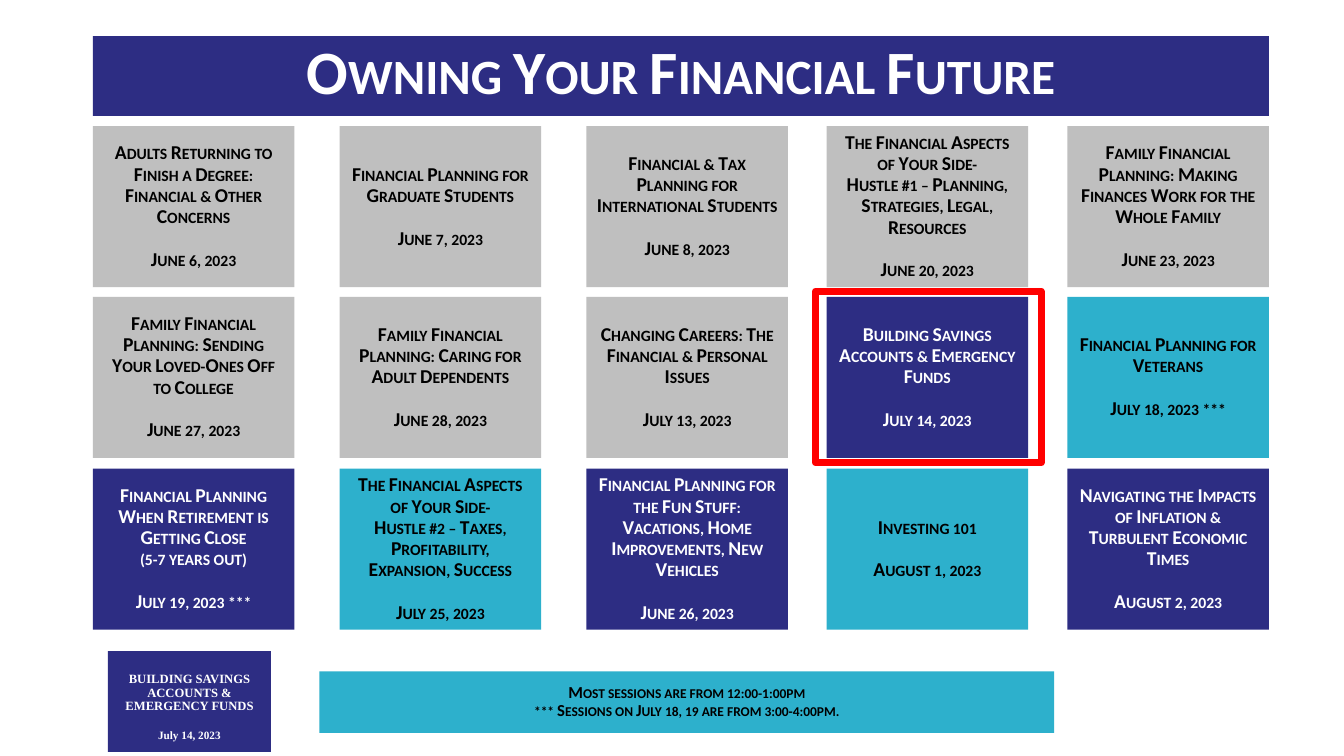
from copy import deepcopy

from pptx import Presentation
from pptx.dml.color import RGBColor
from pptx.enum.shapes import MSO_SHAPE
from pptx.enum.text import MSO_ANCHOR as Anchor, PP_ALIGN as Align
from pptx.oxml.ns import qn
from pptx.util import Cm, Pt

NAVY = RGBColor(0x2D, 0x2D, 0x83)
TEAL = RGBColor(0x2D, 0xB0, 0xCC)
GRAY = RGBColor(0xBF, 0xBF, 0xBF)
RED = RGBColor(0xFF, 0x00, 0x00)
WHITE = RGBColor(0xFF, 0xFF, 0xFF)
BLACK = RGBColor(0x00, 0x00, 0x00)

# Content: rows of sessions as (topic, date, fill)
TITLE = "Owning Your Financial Future"
SESSIONS = [
    [
        ("Adults Returning to Finish a Degree: Financial & Other Concerns", "June 6, 2023", GRAY),
        ("Financial Planning for Graduate Students", "June 7, 2023", GRAY),
        ("Financial & Tax Planning for International Students", "June 8, 2023", GRAY),
        ("The Financial Aspects of Your Side-\nHustle #1 – Planning, Strategies, Legal, Resources",
         "June 20, 2023", GRAY),
        ("Family Financial Planning: Making Finances Work for the Whole Family",
         "June 23, 2023", GRAY),
    ],
    [
        ("Family Financial Planning: Sending Your Loved-Ones Off to College", "June 27, 2023", GRAY),
        ("Family Financial Planning: Caring for Adult Dependents", "June 28, 2023", GRAY),
        ("Changing Careers: The Financial & Personal Issues", "July 13, 2023", GRAY),
        ("Building Savings Accounts & Emergency Funds", "July 14, 2023", NAVY),
        ("Financial Planning for Veterans", "July 18, 2023 ***", TEAL),
    ],
    [
        ("Financial Planning When Retirement is Getting Close\n(5-7 years out)",
         "July 19, 2023 ***", NAVY),
        ("The Financial Aspects of Your Side-\nHustle #2 – Taxes, Profitability, Expansion, Success",
         "July 25, 2023", TEAL),
        ("Financial Planning for the Fun Stuff: Vacations, Home Improvements, New Vehicles",
         "June 26, 2023", NAVY),
        ("Investing 101", "August 1, 2023", TEAL),
        ("Navigating the Impacts of Inflation & Turbulent Economic Times", "August 2, 2023", NAVY),
    ],
]
HOURS = ("Most sessions are from 12:00-1:00pm\n"
         "*** Sessions on July 18, 19 are from 3:00-4:00pm.")
BADGE = ("BUILDING SAVINGS ACCOUNTS & EMERGENCY FUNDS", "July 14, 2023")

# Layout in centimetres
COLUMN_LEFTS = (2.34, 8.56, 14.78, 20.83, 26.9)
ROW_TOPS = (3.18, 7.48, 11.81)
CARD_WIDTH, CARD_HEIGHT = 5.08, 4.06

prs = Presentation()
prs.slide_width, prs.slide_height = Cm(33.87), Cm(19.05)
slide = prs.slides.add_slide(prs.slide_layouts[6])


def add_box(left, top, width, height):
    box = slide.shapes.add_shape(MSO_SHAPE.RECTANGLE, Cm(left), Cm(top), Cm(width), Cm(height))
    box.shadow.inherit = False
    return box


def add_panel(area, fill, lines, sizes, gap=0.0, typeface="Calibri", small_caps=True,
              anchor=Anchor.MIDDLE):
    """Filled box with one centred bold paragraph per line, gap points apart."""
    panel = add_box(*area)
    panel.fill.solid()
    panel.fill.fore_color.rgb = fill
    panel.line.fill.background()
    frame = panel.text_frame
    frame.word_wrap = True
    frame.vertical_anchor = anchor
    for index, (line, size) in enumerate(zip(lines, sizes)):
        paragraph = frame.add_paragraph() if index else frame.paragraphs[0]
        paragraph.text = line
        paragraph_format = {"alignment": Align.CENTER, "line_spacing": 0.9}
        if index:
            paragraph_format["space_before"] = Pt(gap)
        for name, value in paragraph_format.items():
            setattr(paragraph, name, value)
        for run in paragraph.runs:
            for name, value in {"name": typeface, "size": Pt(size), "bold": True}.items():
                setattr(run.font, name, value)
            run.font.color.rgb = WHITE if fill == NAVY else BLACK
            if small_caps:
                run._r.get_or_add_rPr().set("cap", "small")
        # Line breaks take the size of the text around them
        for line_break in paragraph._p.findall(qn("a:br")):
            line_break.append(deepcopy(paragraph.runs[0]._r.rPr))
    return panel


# Badge in the lower left corner
badge = add_panel((2.72, 16.41, 4.11, 2.54), NAVY, BADGE, (9, 8), gap=11.5,
                  typeface="Times New Roman", small_caps=False)
badge.text_frame.margin_top = Cm(0.4)

# Title bar
add_panel((2.34, 0.91, 29.64, 2.01), NAVY, [TITLE], [44], anchor=Anchor.TOP)

# Session grid
for top, row in zip(ROW_TOPS, SESSIONS):
    for left, (topic, date, fill) in zip(COLUMN_LEFTS, row):
        add_panel((left, top, CARD_WIDTH, CARD_HEIGHT), fill, (topic, date), (14, 14), gap=15.4)

# Session hours
add_panel((8.05, 16.92, 18.52, 1.55), TEAL, [HOURS], [12])

# Frame around the current session
highlight = add_box(20.55, 7.34, 5.69, 4.32)
highlight.fill.background()
highlight.line.color.rgb = RED
highlight.line.width = Pt(5)

prs.save("out.pptx")
